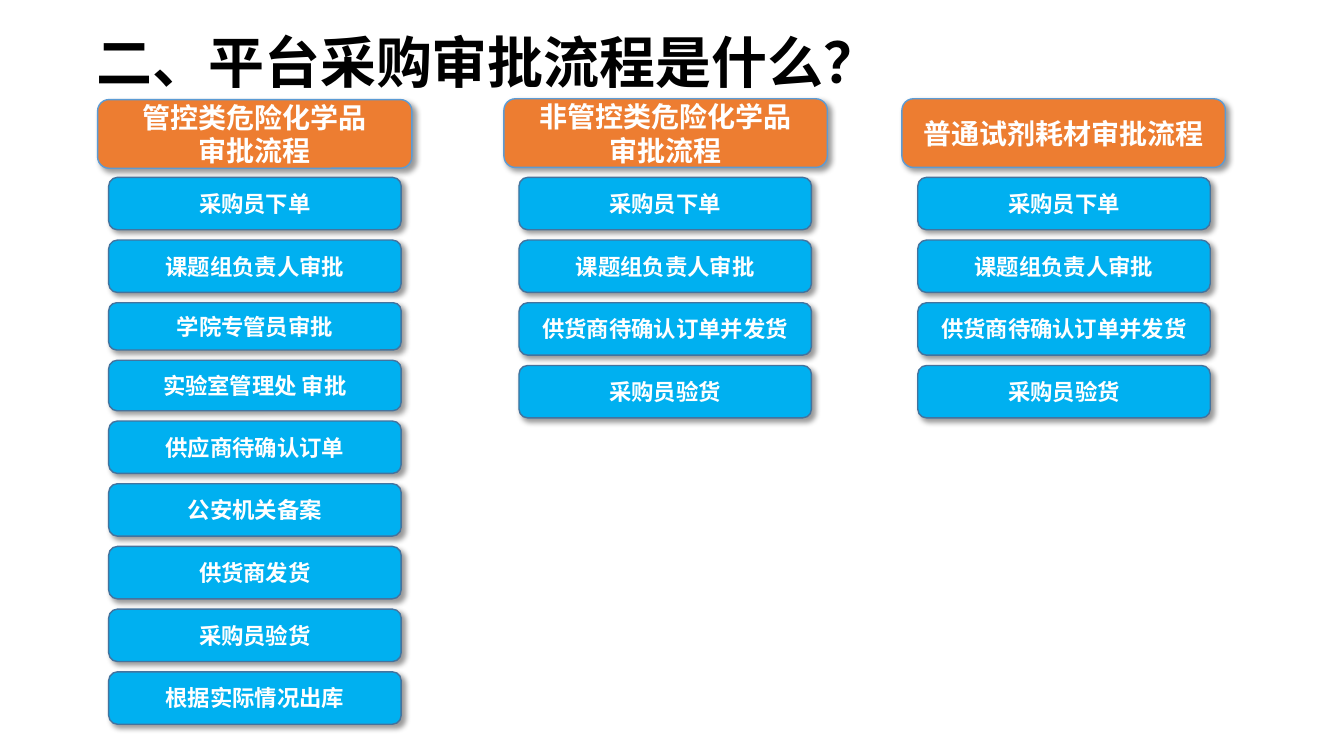
from lxml import etree
from pptx import Presentation
from pptx.dml.color import RGBColor
from pptx.enum.shapes import MSO_SHAPE
from pptx.enum.text import MSO_ANCHOR, PP_ALIGN
from pptx.oxml.ns import qn
from pptx.util import Cm, Pt

COLORS = {
    "title": "000000",
    "label": "FFFFFF",
    "header": "ED7D31",
    "header_edge": "5B9BD5",
    "step": "00B0F0",
    "step_edge": "43739E",
    "shadow": "000000",
}
FONT = "Noto Sans CJK SC"
STEP_TOP, STEP_WIDTH, STEP_HEIGHT, STEP_GAP = 4.47, 7.37, 1.32, 0.26
STEP_HEIGHTS = {"学院专管员审批": 1.19, "实验室管理处 审批": 1.27}
STEP_KINDS = {"学院专管员审批": MSO_SHAPE.ROUNDED_RECTANGLE}
SHORT_FLOW = ["采购员下单", "课题组负责人审批", "供货商待确认订单并发货", "采购员验货"]
CONTROLLED_FLOW = [
    "采购员下单", "课题组负责人审批", "学院专管员审批", "实验室管理处 审批",
    "供应商待确认订单", "公安机关备案", "供货商发货", "采购员验货", "根据实际情况出库",
]
FLOWS = [
    (["管控类危险化学品", "审批流程"], (2.46, 2.51, 7.92), 2.74, CONTROLLED_FLOW),
    (["非管控类危险化学品", "审批流程"], (12.7, 2.49, 8.15), 13.08, SHORT_FLOW),
    (["普通试剂耗材审批流程"], (22.73, 2.49, 8.15), 23.13, SHORT_FLOW),
]


class FlowSlide:
    def __init__(self, deck):
        self.slide = deck.slides.add_slide(deck.slide_layouts[6])

    def set_lines(self, frame, lines, size, color, align):
        frame.word_wrap = True
        for number, line in enumerate(lines):
            paragraph = frame.paragraphs[0] if number == 0 else frame.add_paragraph()
            paragraph.text = line
            paragraph.alignment = align
            font = paragraph.font
            font.size = Pt(size)
            font.bold = True
            font.name = FONT
            font.color.rgb = RGBColor.from_string(COLORS[color])
            defaults = paragraph._p.pPr.find(qn("a:defRPr"))
            etree.SubElement(defaults, qn("a:ea"), typeface=FONT)

    def title(self, text, left, top, width, height):
        box = self.slide.shapes.add_textbox(Cm(left), Cm(top), Cm(width), Cm(height))
        self.set_lines(box.text_frame, [text], 40, "title", PP_ALIGN.LEFT)

    def card(self, kind, lines, left, top, width, height, style, size):
        card = self.slide.shapes.add_shape(kind, Cm(left), Cm(top), Cm(width), Cm(height))
        card.fill.solid()
        card.fill.fore_color.rgb = RGBColor.from_string(COLORS[style])
        card.line.color.rgb = RGBColor.from_string(COLORS[style + "_edge"])
        card.line.width = Pt(1)
        self.cast_shadow(card)
        card.text_frame.vertical_anchor = MSO_ANCHOR.MIDDLE
        self.set_lines(card.text_frame, lines, size, "label", PP_ALIGN.CENTER)

    def cast_shadow(self, card):
        card.shadow.inherit = False
        effects = card._element.spPr.find(qn("a:effectLst"))
        shadow = etree.SubElement(
            effects, qn("a:outerShdw"), blurRad=str(Pt(4)), dist=str(Pt(3)),
            dir="2700000", algn="tl", rotWithShape="0",
        )
        tint = etree.SubElement(shadow, qn("a:srgbClr"), val=COLORS["shadow"])
        etree.SubElement(tint, qn("a:alpha"), val="40000")

    def header(self, lines, left, top, width):
        self.card(MSO_SHAPE.ROUNDED_RECTANGLE, lines, left, top, width, 1.73, "header", 20)

    def steps(self, names, left):
        top = STEP_TOP
        for name in names:
            kind = STEP_KINDS.get(name, MSO_SHAPE.FLOWCHART_ALTERNATE_PROCESS)
            height = STEP_HEIGHTS.get(name, STEP_HEIGHT)
            self.card(kind, [name], left, top, STEP_WIDTH, height, "step", 16)
            top += height + STEP_GAP


def main():
    deck = Presentation()
    deck.slide_width, deck.slide_height = Cm(33.87), Cm(19.05)
    approval = FlowSlide(deck)
    approval.title("二、平台采购审批流程是什么？", 2.18, 0.56, 20.55, 1.96)
    for heading, place, step_left, names in FLOWS:
        approval.header(heading, *place)
        approval.steps(names, step_left)
    deck.save("out.pptx")


if __name__ == "__main__":
    main()
